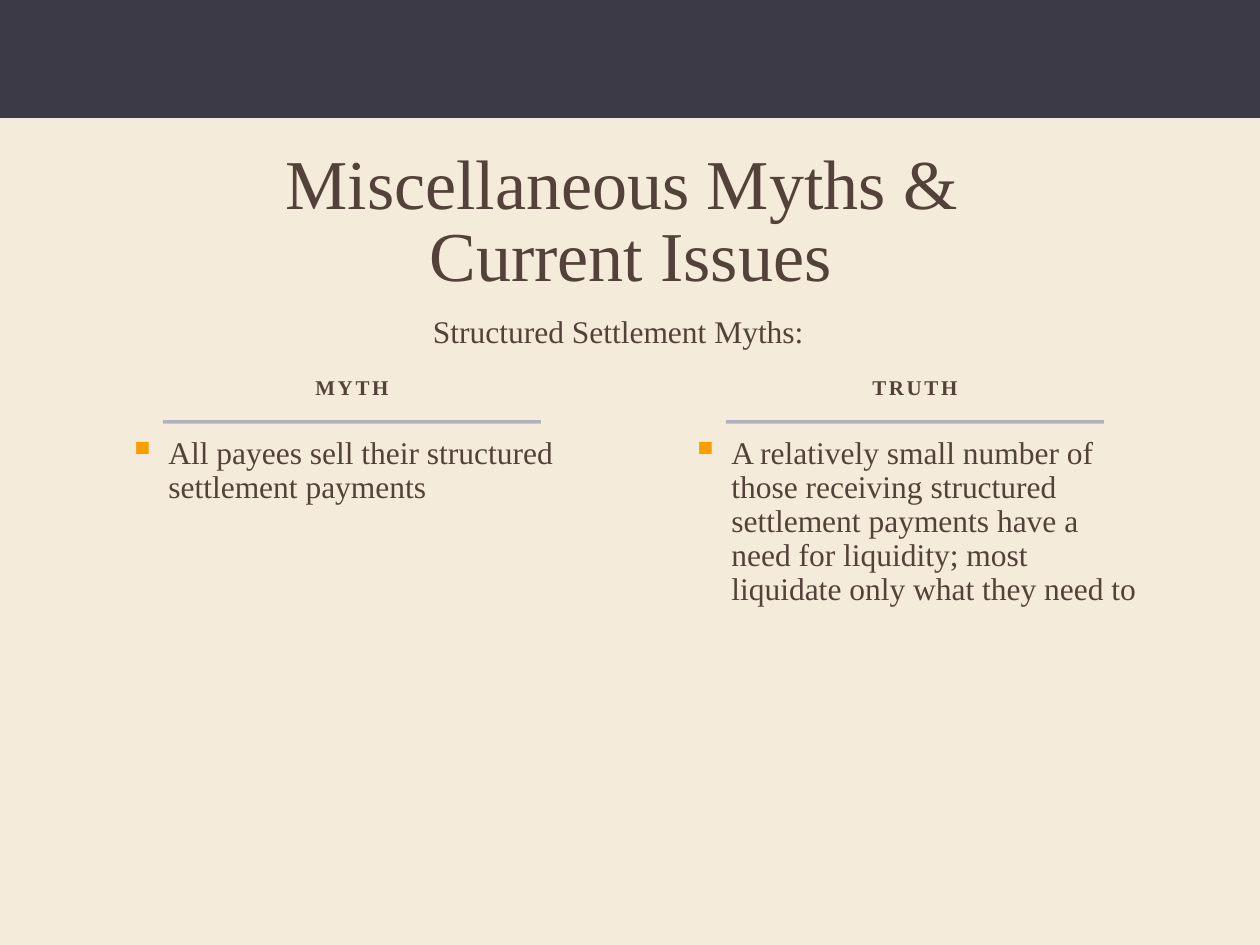
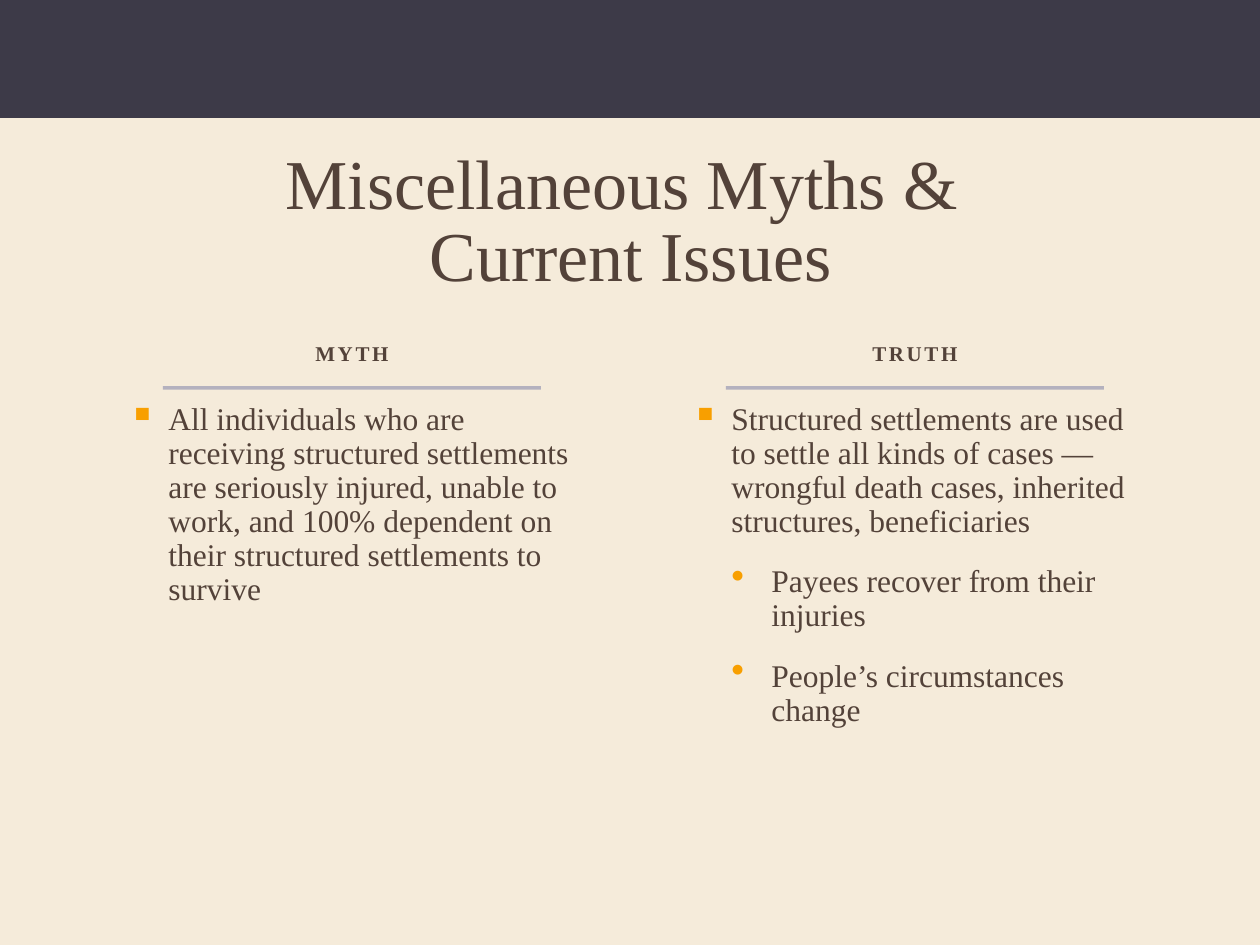
"""Build two slides that set structured settlement myths against the truth."""
from dataclasses import dataclass

from lxml.etree import SubElement
from pptx import Presentation
from pptx.dml.color import RGBColor
from pptx.enum.shapes import MSO_CONNECTOR, MSO_SHAPE
from pptx.enum.text import MSO_ANCHOR as Anchor, PP_ALIGN as Align
from pptx.oxml.ns import qn
from pptx.slide import Slide
from pptx.text.text import _Paragraph as Paragraph
from pptx.util import Emu, Pt

CREAM = RGBColor(0xF5, 0xEB, 0xDA)
SLATE = RGBColor(0x3D, 0x3A, 0x48)
BROWN = RGBColor(0x53, 0x42, 0x39)
ORANGE = RGBColor(0xF8, 0x9F, 0x00)
LILAC = RGBColor(0xAE, 0xAB, 0xBB)
FONT = "Times New Roman"
EMU_PER_INCH, PX_PER_INCH = 914400, 126
SLIDE_WIDTH, SLIDE_HEIGHT, BAND_HEIGHT = 1260, 945, 118
TITLE = "Miscellaneous Myths & \vCurrent Issues"
COLUMN_LEFT, COLUMN_PITCH, COLUMN_WIDTH, BODY_HEIGHT = 116, 563, 472, 455
HEADING_INSET, HEADING_WIDTH, HEADING_HEIGHT = 47, 378, 64
RULE_OFFSET, BODY_OFFSET = 65, 74
INDENT_STEP = 40


@dataclass(frozen=True)
class Box:
    """Place and size in px."""
    left: int
    top: int
    width: int
    height: int


@dataclass(frozen=True)
class TextStyle:
    """Look of a text block."""
    size: int
    line_spacing: float = 0.9
    align: Align = Align.CENTER
    anchor: Anchor = Anchor.MIDDLE
    bold: bool = False
    tracking: int = 0


@dataclass(frozen=True)
class BulletStyle:
    """Mark and gap of one bullet level."""
    mark: str
    space_before: int


@dataclass(frozen=True)
class Bullet:
    """One bulleted paragraph."""
    text: str
    level: int = 0


@dataclass(frozen=True)
class Column:
    """A heading with the bullets below it."""
    heading: str
    bullets: tuple[Bullet, ...]


@dataclass(frozen=True)
class Comparison:
    """Content of one slide."""
    columns: tuple[Column, ...]
    top: int
    subtitle: str = ""


TITLE_STYLE = TextStyle(40, line_spacing=0.85)
SUBTITLE_STYLE = TextStyle(18, line_spacing=1.0, anchor=Anchor.TOP)
HEADING_STYLE = TextStyle(12, bold=True, tracking=150)
BODY_STYLE = TextStyle(18, align=Align.LEFT, anchor=Anchor.TOP)
BULLET_STYLES = (BulletStyle("▪", 20), BulletStyle("•", 15))
TITLE_BOX = Box(111, 142, 1039, 164)
SUBTITLE_BOX = Box(116, 306, 1005, 50)

COMPARISONS = (
    Comparison(
        columns=(
            Column("MYTH", (Bullet("All payees sell their structured settlement payments"),)),
            Column("TRUTH", (
                Bullet("A relatively small number of those receiving structured settlement "
                       "payments have a need for liquidity; most liquidate only what they need to"),
            )),
        ),
        top=357,
        subtitle="Structured Settlement Myths:",
    ),
    Comparison(
        columns=(
            Column("MYTH", (
                Bullet("All individuals who are receiving structured settlements are seriously "
                       "injured, unable to work, and 100% dependent on their structured "
                       "settlements to survive"),
            )),
            Column("TRUTH", (
                Bullet("Structured settlements are used to settle all kinds of cases — wrongful "
                       "death cases, inherited structures, beneficiaries"),
                Bullet("Payees recover from their injuries", level=1),
                Bullet("People’s circumstances change", level=1),
            )),
        ),
        top=323,
    ),
)


def px(length: int) -> Emu:
    """Turn px into EMU."""
    return Emu(round(length * EMU_PER_INCH / PX_PER_INCH))


def place(box: Box) -> tuple[Emu, Emu, Emu, Emu]:
    """Give a box as EMU arguments."""
    return px(box.left), px(box.top), px(box.width), px(box.height)


def add_bullet(paragraph: Paragraph, level: int, is_first: bool) -> None:
    """Give a paragraph its level, hanging indent and mark."""
    style = BULLET_STYLES[level]
    paragraph.level = level
    properties = paragraph._p.get_or_add_pPr()
    properties.set("marL", str(px(INDENT_STEP * (level + 1))))
    properties.set("indent", str(-px(INDENT_STEP)))
    color = SubElement(properties, qn("a:buClr"))
    SubElement(color, qn("a:srgbClr"), val=str(ORANGE))
    SubElement(properties, qn("a:buSzPct"), val="120000")
    SubElement(properties, qn("a:buChar"), char=style.mark)
    if not is_first:
        paragraph.space_before = Pt(style.space_before)


def format_paragraph(paragraph: Paragraph, style: TextStyle) -> None:
    """Apply a text style to a paragraph and its runs."""
    paragraph.alignment = style.align
    paragraph.line_spacing = style.line_spacing
    for run in paragraph.runs:
        run.font.name = FONT
        run.font.size = Pt(style.size)
        run.font.bold = style.bold
        run.font.color.rgb = BROWN
        if style.tracking:
            run._r.get_or_add_rPr().set("spc", str(style.tracking))


def add_text(slide: Slide, box: Box, text: str, style: TextStyle,
             bullets: tuple[Bullet, ...] = ()) -> None:
    """Add a text box, bulleted where bullets are given."""
    text_frame = slide.shapes.add_textbox(*place(box)).text_frame
    text_frame.word_wrap = True
    text_frame.vertical_anchor = style.anchor
    text_frame.text = text
    for index, bullet in enumerate(bullets):
        add_bullet(text_frame.paragraphs[index], bullet.level, index == 0)
    for paragraph in text_frame.paragraphs:
        format_paragraph(paragraph, style)


def add_rule(slide: Slide, left: int, top: int) -> None:
    """Add the slightly transparent rule below a heading."""
    rule = slide.shapes.add_connector(
        MSO_CONNECTOR.STRAIGHT, px(left), px(top), px(left + HEADING_WIDTH), px(top))
    rule.line.color.rgb = LILAC
    rule.line.width = Pt(2)
    color = rule.line._ln.find(f".//{qn('a:srgbClr')}")
    SubElement(color, qn("a:alpha"), val="90000")
    SubElement(rule._element.spPr, qn("a:effectLst"))


def add_frame(slide: Slide) -> None:
    """Draw the background, band and title that all slides share."""
    slide.background.fill.solid()
    slide.background.fill.fore_color.rgb = CREAM
    band = slide.shapes.add_shape(
        MSO_SHAPE.RECTANGLE, *place(Box(0, 0, SLIDE_WIDTH, BAND_HEIGHT)))
    band.shadow.inherit = False
    band.fill.solid()
    band.fill.fore_color.rgb = SLATE
    band.line.fill.background()
    add_text(slide, TITLE_BOX, TITLE, TITLE_STYLE)


def add_column(slide: Slide, column: Column, left: int, top: int) -> None:
    """Add a heading, its rule and its bullets."""
    heading_left = left + HEADING_INSET
    add_text(slide, Box(heading_left, top, HEADING_WIDTH, HEADING_HEIGHT),
             column.heading, HEADING_STYLE)
    add_rule(slide, heading_left, top + RULE_OFFSET)
    add_text(slide, Box(left, top + BODY_OFFSET, COLUMN_WIDTH, BODY_HEIGHT),
             "\n".join(bullet.text for bullet in column.bullets), BODY_STYLE, column.bullets)


def main() -> None:
    """Build and save the presentation."""
    presentation = Presentation()
    presentation.slide_width = px(SLIDE_WIDTH)
    presentation.slide_height = px(SLIDE_HEIGHT)
    for comparison in COMPARISONS:
        slide = presentation.slides.add_slide(presentation.slide_layouts[6])
        add_frame(slide)
        if comparison.subtitle:
            add_text(slide, SUBTITLE_BOX, comparison.subtitle, SUBTITLE_STYLE)
        for index, column in enumerate(comparison.columns):
            add_column(slide, column, COLUMN_LEFT + index * COLUMN_PITCH, comparison.top)
    presentation.save("out.pptx")


if __name__ == "__main__":
    main()
